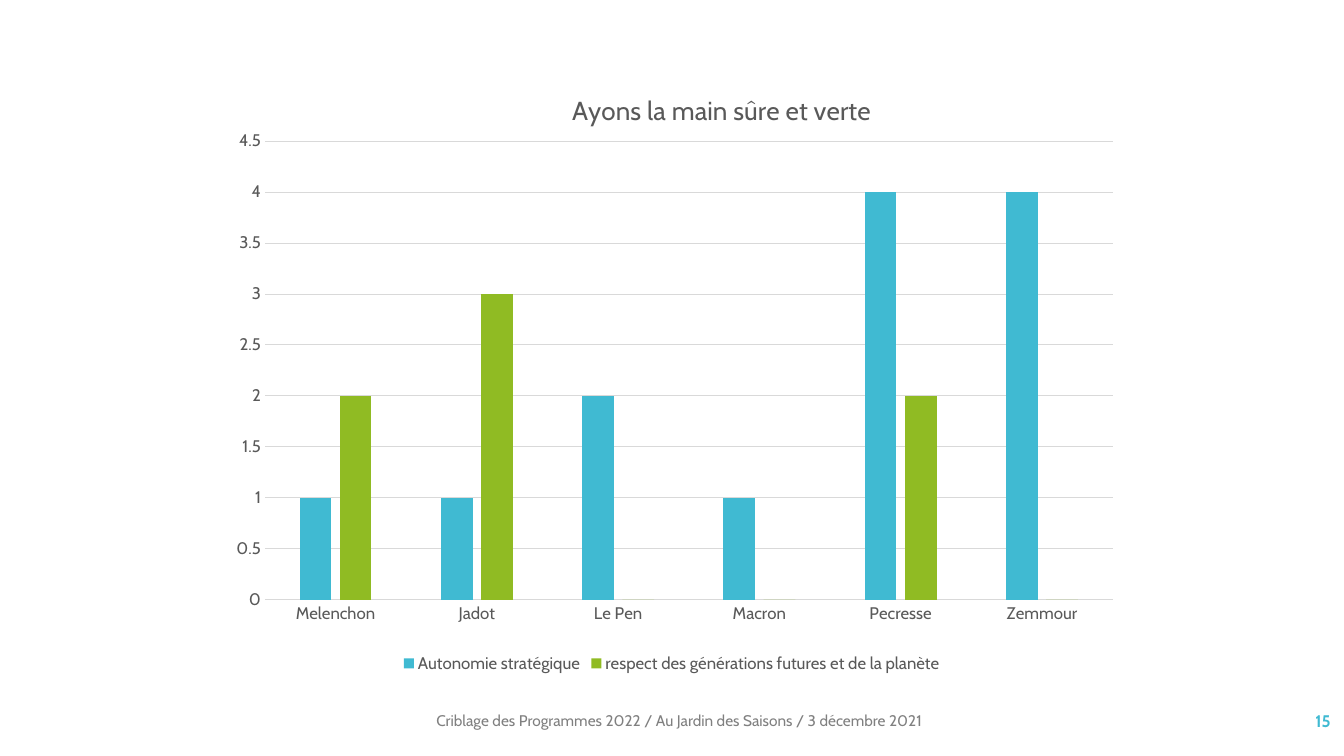
from dataclasses import dataclass

from lxml import etree
from pptx import Presentation
from pptx import util as u
from pptx.chart import data as chart_data
from pptx.dml import color
from pptx.enum import chart as charts, text
from pptx.oxml import ns


@dataclass(frozen=True)
class Theme:
    font: str = "Cabin"
    blue: str = "40BAD2"
    green: str = "90BB23"
    label: str = "595959"
    grid: str = "D9D9D9"
    footer: str = "808080"
    title_size: float = 18.6
    label_size: float = 12
    footer_size: float = 11
    line_width: float = 0.75


THEME = Theme()


@dataclass(frozen=True)
class Area:
    left: float
    top: float
    width: float
    height: float

    def lengths(self) -> list[u.Length]:
        return [u.Pt(v) for v in (self.left, self.top, self.width, self.height)]


@dataclass(frozen=True)
class Label:
    words: str
    area: Area
    size: float
    ink: str
    bold: bool = False
    align: text.PP_ALIGN = text.PP_ALIGN.LEFT


@dataclass(frozen=True)
class Criterion:
    name: str
    scores: tuple[int, ...]
    fill: str


CANDIDATES = ("Melenchon", "Jadot", "Le Pen", "Macron", "Pecresse", "Zemmour")
CRITERIA = (
    Criterion("Autonomie stratégique", (1, 1, 2, 1, 4, 4), THEME.blue),
    Criterion("respect des générations futures et de la planète", (2, 3, 0, 0, 2, 0), THEME.green),
)
CHART_TITLE = "Ayons la main sûre et verte"
CHART_AREA = Area(159.84, 56.88, 640.08, 426.96)
# Inside the chart, from its top left corner
TITLE_LEFT, TITLE_TOP = 245.4, 5.7
PLOT_AREA = Area(29.4, 44, 605.5, 327.5)
LABELS = (
    Label("Criblage des Programmes 2022 / Au Jardin des Saisons / 3 décembre 2021",
          Area(304.56, 500.4, 465.12, 28.8), THEME.footer_size, THEME.footer),
    Label("15", Area(837.36, 500.4, 120.24, 28.8), THEME.label_size, THEME.blue,
          True, text.PP_ALIGN.RIGHT),
)


def style_font(font, size: float, ink: str, bold: bool = False) -> None:
    font.name = THEME.font
    font.size = u.Pt(size)
    font.bold = bold
    font.color.rgb = color.RGBColor.from_string(ink)


def style_line(line) -> None:
    line.width = u.Pt(THEME.line_width)
    line.color.rgb = color.RGBColor.from_string(THEME.grid)


def set_layout(parent, index: int, **settings: str | float) -> None:
    """Fix the place of a chart part, in fractions of the chart."""
    for old in parent.findall(ns.qn("c:layout")):
        parent.remove(old)
    layout = etree.Element(ns.qn("c:layout"))
    parent.insert(index, layout)
    manual = etree.SubElement(layout, ns.qn("c:manualLayout"))
    for name, value in settings.items():
        etree.SubElement(manual, ns.qn(f"c:{name}")).set("val", str(value))


def add_label(page, label: Label) -> None:
    frame = page.shapes.add_textbox(*label.area.lengths()).text_frame
    frame.word_wrap = True
    frame.vertical_anchor = text.MSO_ANCHOR.MIDDLE
    para = frame.paragraphs[0]
    para.alignment = label.align
    span = para.add_run()
    span.text = label.words
    style_font(span.font, label.size, label.ink, label.bold)


def add_score_chart(page) -> None:
    scores = chart_data.CategoryChartData(number_format="General")
    scores.categories = CANDIDATES
    for criterion in CRITERIA:
        scores.add_series(criterion.name, criterion.scores)
    chart = page.shapes.add_chart(
        charts.XL_CHART_TYPE.COLUMN_CLUSTERED, *CHART_AREA.lengths(), scores).chart
    style_font(chart.font, THEME.label_size, THEME.label)
    width, height = CHART_AREA.width, CHART_AREA.height

    # Title
    chart.has_title = True
    title = chart.chart_title
    span = title.text_frame.paragraphs[0].add_run()
    span.text = CHART_TITLE
    style_font(span.font, THEME.title_size, THEME.label)
    title.include_in_layout = False
    set_layout(title._element, 1, xMode="edge", yMode="edge",
               x=TITLE_LEFT / width, y=TITLE_TOP / height)

    # Columns
    plot = chart.plots[0]
    plot.gap_width, plot.overlap, plot.vary_by_categories = 219, -27, False
    for series, criterion in zip(plot.series, CRITERIA):
        series.format.fill.solid()
        series.format.fill.fore_color.rgb = color.RGBColor.from_string(criterion.fill)
    set_layout(chart._chartSpace.chart.plotArea, 0, layoutTarget="inner",
               xMode="edge", yMode="edge",
               x=PLOT_AREA.left / width, y=PLOT_AREA.top / height,
               w=PLOT_AREA.width / width, h=PLOT_AREA.height / height)

    # Axes
    for axis in (chart.category_axis, chart.value_axis):
        axis.major_tick_mark = axis.minor_tick_mark = charts.XL_TICK_MARK.NONE
        style_font(axis.tick_labels.font, THEME.label_size, THEME.label)
    style_line(chart.category_axis.format.line)
    values = chart.value_axis
    values.minimum_scale, values.maximum_scale, values.major_unit = 0, 4.5, 0.5
    values.format.line.fill.background()
    style_line(values.major_gridlines.format.line)

    # Legend
    chart.has_legend = True
    chart.legend.position = charts.XL_LEGEND_POSITION.BOTTOM
    chart.legend.include_in_layout = False
    style_font(chart.legend.font, THEME.label_size, THEME.label)


def main() -> None:
    deck = Presentation()
    deck.slide_width, deck.slide_height = u.Pt(960), u.Pt(540)
    page = deck.slides.add_slide(deck.slide_layouts[6])
    for label in LABELS:
        add_label(page, label)
    add_score_chart(page)
    deck.save("out.pptx")


if __name__ == "__main__":
    main()
